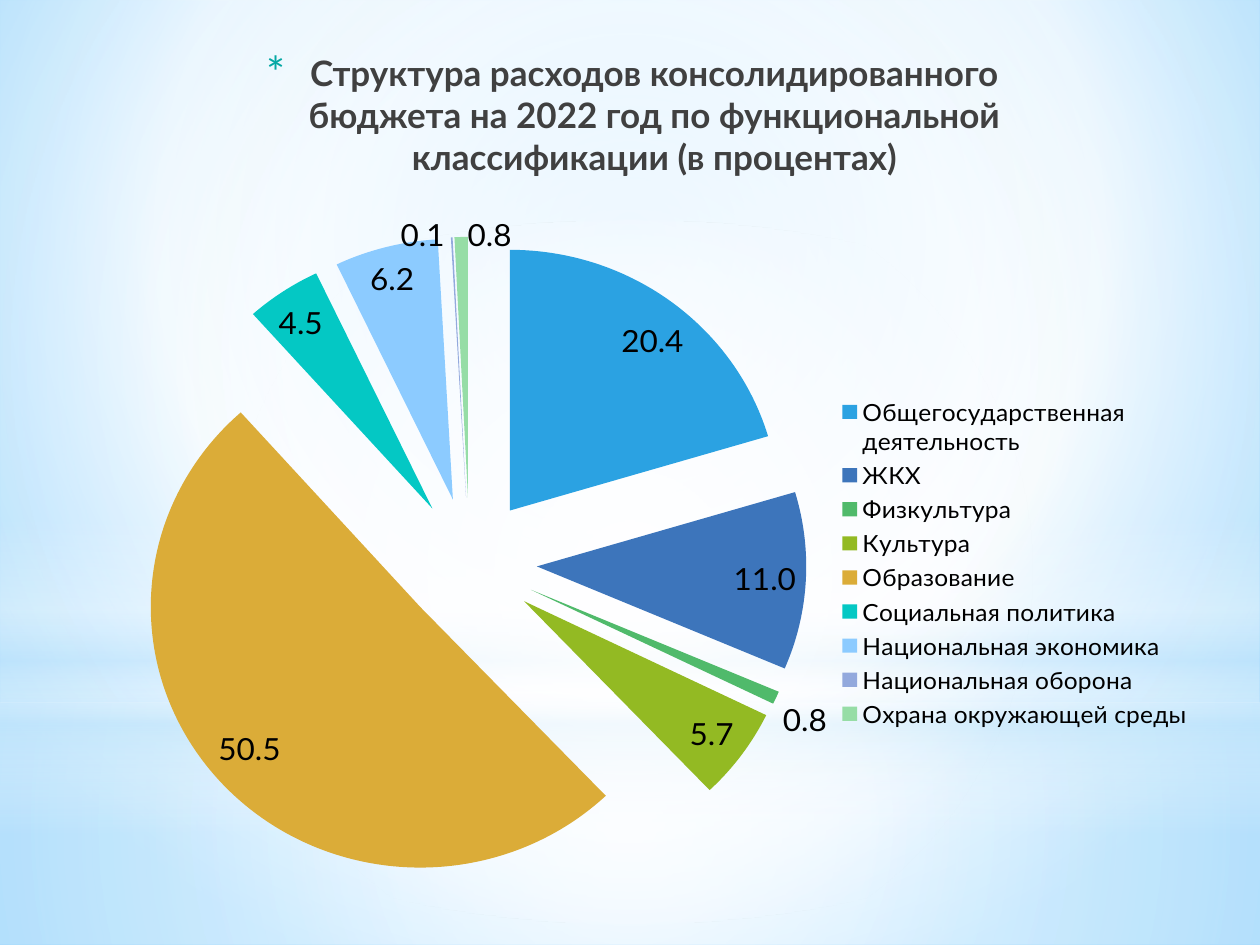
import pptx
import pptx.chart.data
import pptx.dml.color
import pptx.enum.chart
import pptx.enum.shapes
import pptx.enum.text
import pptx.oxml
import pptx.oxml.ns
import pptx.util
from lxml import etree

Cm = pptx.util.Cm
Pt = pptx.util.Pt
qn = pptx.oxml.ns.qn
SHAPES = pptx.enum.shapes.MSO_SHAPE
CENTRE = (50, 50, 50, 50)

EXPENSES = [
    ("Общегосударственная деятельность", 20.4, "2BA2E2"),
    ("ЖКХ", 11.0, "3D75BB"),
    ("Физкультура", 0.8, "50BA6B"),
    ("Культура", 5.7, "93BA23"),
    ("Образование", 50.5, "DBAC38"),
    ("Социальная политика", 4.5, "04C8C4"),
    ("Национальная экономика", 6.2, "8CCBFF"),
    ("Национальная оборона", 0.1, "93A9DD"),
    ("Охрана окружающей среды", 0.8, "96DDA6"),
]

GLOWS = [
    (SHAPES.RECTANGLE, (0, 14.17, 25.4, 4.88), CENTRE,
     [(0, "FFFFFF", 91), (37, "FFFFFF", 76), (100, "C6E7FC", 79)]),
    (SHAPES.RECTANGLE, (0, 0, 25.4, 14.17), CENTRE,
     [(0, "FFFFFF", 89), (48, "FFFFFF", 62), (100, "C6E7FC", 79)]),
    (SHAPES.RECTANGLE, (0, 10.46, 25.4, 6.35), None,
     [(0, "FFFFFF", 0), (29, "FFFFFF", 30), (45, "C6E7FC", 40),
      (55, "FFFFFF", 26), (65, "C6E7FC", 60), (100, "FFFFFF", 0)]),
    (SHAPES.OVAL, (0, 4.45, 25.4, 14.17), CENTRE,
     [(0, "FFFFFF", 100), (56, "FFFFFF", 0)]),
]


def rgb(value):
    return pptx.dml.color.RGBColor.from_string(value)


def apply(target, **values):
    for name, value in values.items():
        setattr(target, name, value)


def add_node(parent, tag, **attributes):
    return etree.SubElement(parent, qn(tag), {k: str(v) for k, v in attributes.items()})


class BudgetSlide:
    font = "Lato"
    ink = "000000"
    heading = "404040"
    bullet = "04A8A4"

    def __init__(self, deck):
        self.slide = deck.slides.add_slide(deck.slide_layouts[6])

    def gradient(self, fill, owner, stops, focus):
        fill.gradient()
        grad = next(owner.iter(qn("a:gradFill")))
        for child in list(grad):
            grad.remove(child)
        stop_list = add_node(grad, "a:gsLst")
        for position, color, opacity in stops:
            stop = add_node(stop_list, "a:gs", pos=position * 1000)
            tint = add_node(stop, "a:srgbClr", val=color)
            if opacity < 100:
                add_node(tint, "a:alpha", val=opacity * 1000)
        if focus:
            circle = add_node(grad, "a:path", path="circle")
            sides = {side: share * 1000 for side, share in zip("ltrb", focus)}
            add_node(circle, "a:fillToRect", **sides)
        else:
            add_node(grad, "a:lin", ang=90 * 60000, scaled=0)

    def background(self, stops, focus):
        self.gradient(self.slide.background.fill, self.slide._element, stops, focus)

    def glow(self, kind, box, focus, stops):
        glow = self.slide.shapes.add_shape(kind, *map(Cm, box))
        self.gradient(glow.fill, glow._element.spPr, stops, focus)
        glow.line.fill.background()
        glow.shadow.inherit = False

    def title(self, box, text):
        frame = self.slide.shapes.add_textbox(*map(Cm, box)).text_frame
        apply(frame, word_wrap=True, vertical_anchor=pptx.enum.text.MSO_ANCHOR.TOP)
        heading = frame.paragraphs[0]
        apply(heading, text=text, alignment=pptx.enum.text.PP_ALIGN.CENTER)
        apply(heading.runs[0].font, name=self.font, size=Pt(20), bold=True)
        heading.runs[0].font.color.rgb = rgb(self.heading)
        rules = heading._p.get_or_add_pPr()
        rules.set("marL", str(Cm(0.89)))
        rules.set("indent", str(-Cm(0.89)))
        add_node(add_node(rules, "a:buClr"), "a:srgbClr", val=self.bullet)
        add_node(rules, "a:buSzPct", val=128000)
        add_node(rules, "a:buFont", typeface=self.font)
        add_node(rules, "a:buChar", char="*")

    def pie(self, box, rows, plot_box):
        names, shares, colors = zip(*rows)
        figures = pptx.chart.data.CategoryChartData(number_format="0.0")
        figures.categories = names
        figures.add_series("Series 1", shares)
        chart = self.slide.shapes.add_chart(
            pptx.enum.chart.XL_CHART_TYPE.PIE, *map(Cm, box), figures).chart
        apply(chart, has_title=False, has_legend=True)
        apply(chart.font, name=self.font, size=Pt(18))
        chart.font.color.rgb = rgb(self.ink)
        apply(chart.legend, include_in_layout=False,
              position=pptx.enum.chart.XL_LEGEND_POSITION.RIGHT)
        apply(chart.legend.font, name=self.font, size=Pt(14))
        chart.legend.font.color.rgb = rgb(self.ink)

        plot = chart.plots[0]
        apply(plot, vary_by_categories=True, has_data_labels=True)
        apply(plot.data_labels, show_value=True, number_format="0.0",
              number_format_is_linked=False,
              position=pptx.enum.chart.XL_LABEL_POSITION.BEST_FIT)
        series = plot.series[0]
        explosion = etree.Element(qn("c:explosion"), val="25")
        series._element.find(qn("c:cat")).addprevious(explosion)
        for index, color in enumerate(colors):
            slice_format = series.points[index].format
            slice_format.fill.solid()
            slice_format.fill.fore_color.rgb = rgb(color)
            slice_format.line.fill.background()
        for point in series._element.findall(qn("c:dPt")):
            explosion.addnext(point)
        points = sorted(series._element.findall(qn("c:dPt")),
                        key=lambda point: int(point.find(qn("c:idx")).get("val")))
        for point in reversed(points):
            explosion.addnext(point)
        self.place_plot(chart, plot_box)

    def place_plot(self, chart, plot_box):
        area = chart._chartSpace.chart.plotArea
        for old in area.findall(qn("c:layout")):
            area.remove(old)
        layout = etree.Element(qn("c:layout"))
        area.insert(0, layout)
        manual = add_node(layout, "c:manualLayout")
        add_node(manual, "c:layoutTarget", val="inner")
        add_node(manual, "c:xMode", val="edge")
        add_node(manual, "c:yMode", val="edge")
        for key, share in zip("xywh", plot_box):
            add_node(manual, "c:" + key, val=share)


def main():
    deck = pptx.Presentation()
    apply(deck, slide_width=Cm(25.4), slide_height=Cm(19.05))
    budget = BudgetSlide(deck)
    budget.background([(0, "B0E0FF", 100), (60, "FFFFFF", 100), (100, "6BC5FF", 100)],
                      (20, 10, 20, 60))
    for glow in GLOWS:
        budget.glow(*glow)
    budget.title((3.71, 0.91, 18.08, 3.18),
                 "Структура расходов консолидированного бюджета на 2022 год "
                 "по функциональной классификации (в процентах)")
    budget.pie((1.3, 3.89, 23.01, 14.45), EXPENSES, (0.06, 0.03, 0.59, 0.94))
    deck.save("out.pptx")


if __name__ == "__main__":
    main()
